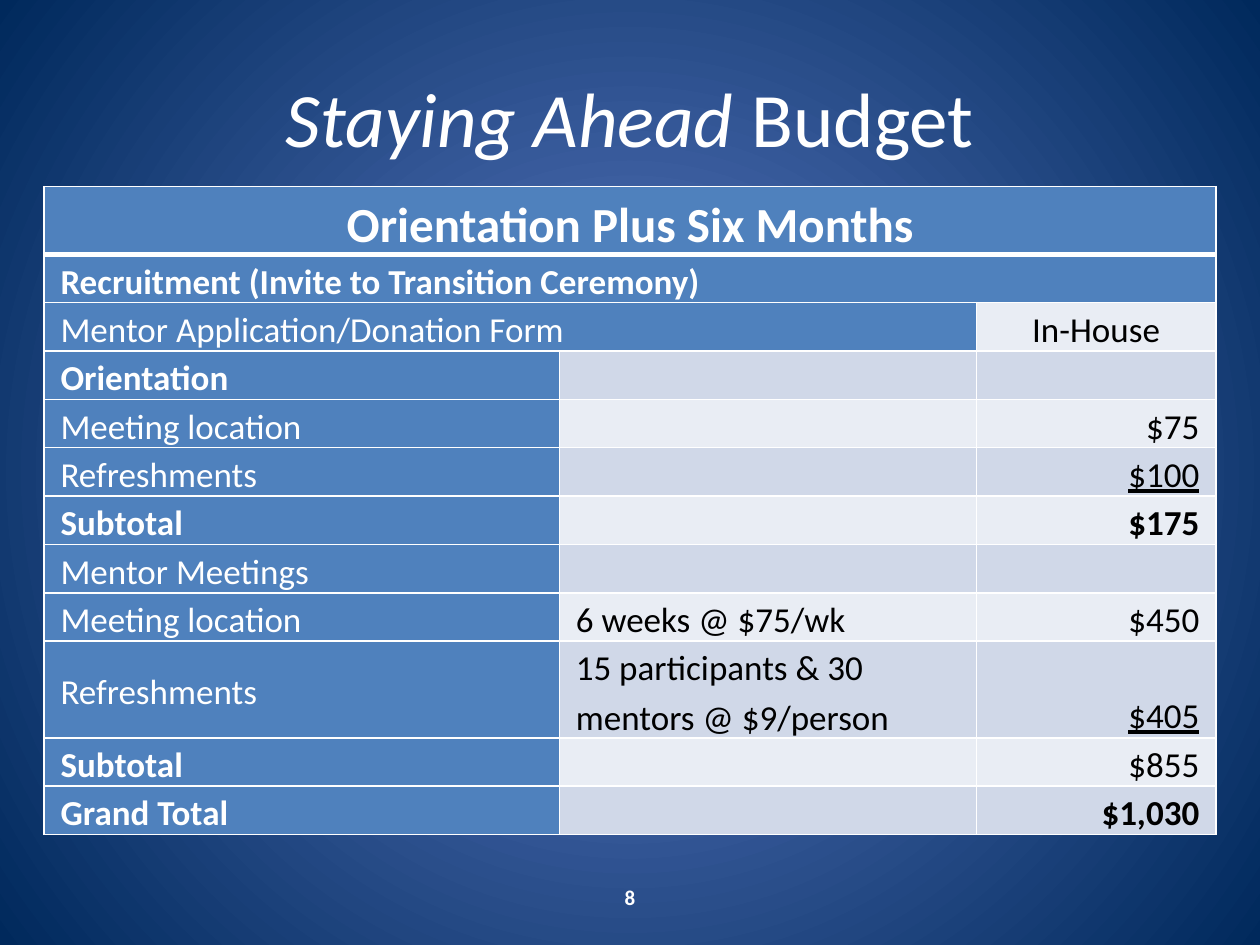
from lxml import etree
from pptx import Presentation
from pptx import util as u
from pptx.dml import color
from pptx.enum import text
from pptx.oxml import ns

Pt = u.Pt
WHITE = color.RGBColor(0xFF, 0xFF, 0xFF)
BLACK = color.RGBColor(0x00, 0x00, 0x00)
GLOW = color.RGBColor(0x5E, 0x7C, 0xC5)
NAVY = color.RGBColor(0x00, 0x29, 0x5C)
BLUE = color.RGBColor(0x4F, 0x81, 0xBD)
BANDS = (color.RGBColor(0xE9, 0xED, 0xF4), color.RGBColor(0xD0, 0xD8, 0xE8))
FONT = "Calibri"
LEFT, CENTER, RIGHT = text.PP_ALIGN.LEFT, text.PP_ALIGN.CENTER, text.PP_ALIGN.RIGHT

COLUMN_WIDTHS = (294.5, 238.3, 136.8)
ROW_HEIGHT = 25.2
TALL_ROW_HEIGHT = 52.6
TALL_ROW = 9
BUDGET = (
    ("Orientation Plus Six Months", "", ""),
    ("Recruitment (Invite to Transition Ceremony)", "", ""),
    ("Mentor Application/Donation Form", "", "In-House"),
    ("Orientation", "", ""),
    ("Meeting location", "", "$75"),
    ("Refreshments", "", "$100"),
    ("Subtotal", "", "$175"),
    ("Mentor Meetings", "", ""),
    ("Meeting location", "6 weeks @ $75/wk", "$450"),
    ("Refreshments", "15 participants & 30 mentors @ $9/person", "$405"),
    ("Subtotal", "", "$855"),
    ("Grand Total", "", "$1,030"),
)
BOLD_LABEL_ROWS = {0, 1, 3, 6, 10, 11}
BOLD_AMOUNTS = {"$175", "$1,030"}
UNDERLINED_AMOUNTS = {"$100", "$405"}
SPACED_ROWS = {2, 6}
LAST_MERGED_COLUMN = {0: 2, 1: 2, 2: 1}


def format_run(run, size, rgb, bold=False, italic=False, underline=False):
    font = run.font
    font.name = FONT
    font.size = Pt(size)
    font.color.rgb = rgb
    font.bold = bold
    font.italic = italic
    font.underline = underline


def set_background(slide):
    fill = slide.background.fill
    fill.gradient()
    for stop, rgb in zip(fill.gradient_stops, (GLOW, NAVY)):
        stop.color.rgb = rgb
    gradient = slide.element.find(".//" + ns.qn("a:gradFill"))
    gradient.remove(gradient.find(ns.qn("a:lin")))
    circle = etree.SubElement(gradient, ns.qn("a:path"), {"path": "circle"})
    sides = dict.fromkeys("ltrb", "50000")
    etree.SubElement(circle, ns.qn("a:fillToRect"), sides)


def add_centered_text(slide, box, runs, size, bold=False):
    shape = slide.shapes.add_textbox(*map(Pt, box))
    frame = shape.text_frame
    frame.word_wrap = True
    frame.vertical_anchor = text.MSO_ANCHOR.MIDDLE
    paragraph = frame.paragraphs[0]
    paragraph.alignment = CENTER
    for words, italic in runs:
        run = paragraph.add_run()
        run.text = words
        format_run(run, size, WHITE, bold, italic)


def set_borders(cell, row):
    widths = {"L": 1, "R": 1, "T": 3 if row == 1 else 1, "B": 3 if row == 0 else 1}
    properties = cell._tc.get_or_add_tcPr()
    for index, (side, width) in enumerate(widths.items()):
        line = etree.Element(ns.qn("a:ln" + side), {"w": str(Pt(width))})
        solid = etree.SubElement(line, ns.qn("a:solidFill"))
        etree.SubElement(solid, ns.qn("a:srgbClr"), {"val": str(WHITE)})
        properties.insert(index, line)


def fill_cell(cell, row, column, words):
    is_label = column <= LAST_MERGED_COLUMN.get(row, 0)
    cell.margin_left = cell.margin_right = Pt(9.4)
    cell.margin_top = cell.margin_bottom = Pt(0)
    cell.fill.solid()
    cell.fill.fore_color.rgb = BLUE if is_label else BANDS[row % 2]
    set_borders(cell, row)
    if not words:
        return
    cell.text_frame.text = words
    paragraph = cell.text_frame.paragraphs[0]
    paragraph.line_spacing = 1.15
    if row in SPACED_ROWS:
        paragraph.space_after = Pt(6)
    if row == 0 or words == "In-House":
        paragraph.alignment = CENTER
    else:
        paragraph.alignment = RIGHT if column == 2 else LEFT
    bold = row in BOLD_LABEL_ROWS if is_label else words in BOLD_AMOUNTS
    format_run(paragraph.runs[0], 28 if row == 0 else 20, WHITE if is_label else BLACK,
               bold, underline=words in UNDERLINED_AMOUNTS)


def add_budget_table(slide, box):
    frame = slide.shapes.add_table(len(BUDGET), len(COLUMN_WIDTHS), *map(Pt, box))
    table = frame.table
    table.horz_banding = False
    for column, width in zip(table.columns, COLUMN_WIDTHS):
        column.width = Pt(width)
    for index, row in enumerate(table.rows):
        row.height = Pt(TALL_ROW_HEIGHT if index == TALL_ROW else ROW_HEIGHT)
    for row, entries in enumerate(BUDGET):
        for column, words in enumerate(entries):
            fill_cell(table.cell(row, column), row, column, words)
    for row, column in LAST_MERGED_COLUMN.items():
        table.cell(row, 0).merge(table.cell(row, column))
    table.cell(TALL_ROW, 0).vertical_anchor = text.MSO_ANCHOR.MIDDLE
    table.cell(TALL_ROW, 2).vertical_anchor = text.MSO_ANCHOR.BOTTOM


def main():
    presentation = Presentation()
    presentation.slide_width = Pt(720)
    presentation.slide_height = Pt(540)
    slide = presentation.slides.add_slide(presentation.slide_layouts[6])
    set_background(slide)
    title = (("Staying Ahead", True), (" Budget", False))
    add_centered_text(slide, (36, 21.6, 648, 90), title, 44)
    add_centered_text(slide, (276, 498, 168, 28.8), (("8", False),), 12, bold=True)
    add_budget_table(slide, (25.2, 106.6, 669.6, 350))
    presentation.save("out.pptx")


if __name__ == "__main__":
    main()
